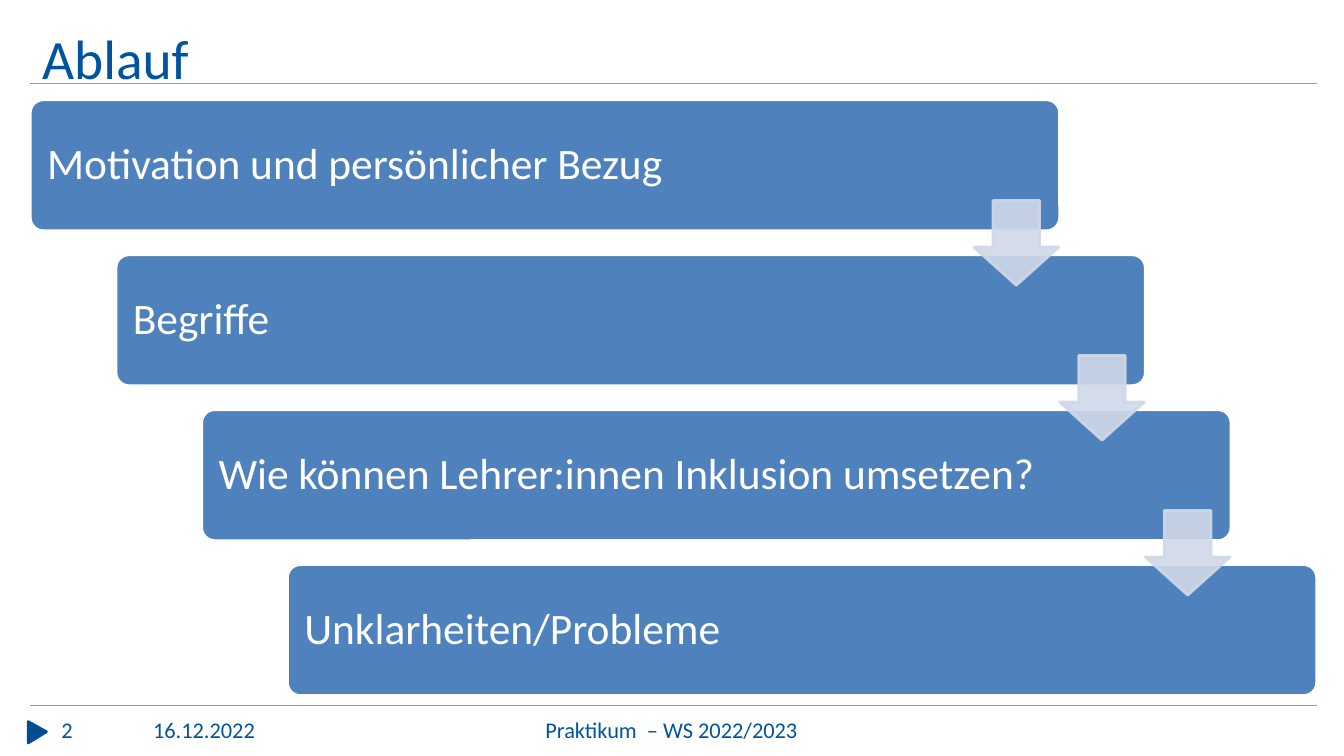
from lxml import etree
from pptx import Presentation
from pptx.dml.color import RGBColor
from pptx.enum import shapes, text
from pptx.oxml.ns import qn
from pptx.util import Inches, Pt

# Content
TITLE = "Ablauf"
STEPS = [
    "Motivation und persönlicher Bezug",
    "Begriffe",
    "Wie können Lehrer:innen Inklusion umsetzen?",
    "Unklarheiten/Probleme",
]
# text, left, width, alignment
FOOTER = [
    ("2", 0.51, 0.7, text.PP_ALIGN.LEFT),
    ("Praktikum  – WS 2022/2023", 3.25, 6.82, text.PP_ALIGN.CENTER),
    ("16.12.2022", 1.42, 1.57, text.PP_ALIGN.LEFT),
]
COLORS = {"dark": "004D91", "text": "00549F", "rule": "74A4D4",
          "step": "4F81BD", "white": "FFFFFF", "arrow": "D0D8E8"}
FONT = "Calibri"

# Layout in inches
LEFT, RIGHT = 0.3, 13.06
RULES = (0.83, 7)
STEP_W, STEP_H, STEP_TOP = 10.21, 1.3, 0.99
DX = (RIGHT - LEFT - STEP_W) / (len(STEPS) - 1)
DY = 1.537
ARROW, ARROW_LEFT, ARROW_TOP = 0.84, 9.66, 1.99


def rgb(name):
    return RGBColor.from_string(COLORS[name])


def paint(sp, fill, line, alpha=None):
    sp.shadow.inherit = False
    sp.fill.solid()
    sp.fill.fore_color.rgb = rgb(fill)
    sp.line.color.rgb = rgb(line)
    sp.line.width = Pt(2)
    if alpha:
        for clr in sp._element.spPr.iter(qn("a:srgbClr")):
            etree.SubElement(clr, qn("a:alpha")).set("val", str(alpha * 1000))


def write(sp, words, size, color, align=text.PP_ALIGN.LEFT,
          anchor=text.MSO_ANCHOR.TOP):
    tf = sp.text_frame
    tf.word_wrap = True
    tf.vertical_anchor = anchor
    tf.text = words
    p = tf.paragraphs[0]
    p.alignment = align
    f = p.runs[0].font
    f.name, f.size, f.color.rgb = FONT, Pt(size), rgb(color)
    return tf


def textbox(s, x, y, w, h, *args, **kwargs):
    sp = s.shapes.add_textbox(Inches(x), Inches(y), Inches(w), Inches(h))
    write(sp, *args, **kwargs)


def main():
    prs = Presentation()
    prs.slide_width, prs.slide_height = Inches(13.33), Inches(7.5)
    s = prs.slides.add_slide(prs.slide_layouts[6])

    # Footer marker
    fb = s.shapes.build_freeform(Inches(0.46), Inches(7.26))
    fb.add_line_segments([(Inches(0.28), Inches(7.37)),
                          (Inches(0.28), Inches(7.16))], close=True)
    paint(fb.convert_to_shape(), "dark", "dark")

    # Rules above and below the content
    for y in RULES:
        cx = s.shapes.add_connector(shapes.MSO_CONNECTOR.STRAIGHT,
                                    Inches(RIGHT), Inches(y), Inches(LEFT), Inches(y))
        cx.line.color.rgb = rgb("rule")
        cx.line.width = Pt(0.75)
        etree.SubElement(cx._element.spPr, qn("a:effectLst"))

    # Title
    textbox(s, 0.32, 0.29, 12.74, 0.55, TITLE, 39.6, "text",
            anchor=text.MSO_ANCHOR.MIDDLE)

    # Staircase of steps
    for i, step in enumerate(STEPS):
        sp = s.shapes.add_shape(shapes.MSO_SHAPE.ROUNDED_RECTANGLE,
                                Inches(LEFT + i * DX), Inches(STEP_TOP + i * DY),
                                Inches(STEP_W), Inches(STEP_H))
        sp.adjustments[0] = 0.1
        paint(sp, "step", "white")
        tf = write(sp, step, 31, "white", anchor=text.MSO_ANCHOR.MIDDLE)
        tf.margin_left = Inches(0.13)
        tf.paragraphs[0].line_spacing = 0.9

    # Arrows from step to step
    for i in range(len(STEPS) - 1):
        sp = s.shapes.add_shape(shapes.MSO_SHAPE.DOWN_ARROW,
                                Inches(ARROW_LEFT + i * DX), Inches(ARROW_TOP + i * DY),
                                Inches(ARROW), Inches(ARROW))
        sp.adjustments[0], sp.adjustments[1] = 0.55, 0.45
        paint(sp, "arrow", "arrow", alpha=90)

    # Footer
    for words, x, w, align in FOOTER:
        textbox(s, x, 7.06, w, 0.4, words, 16, "text", align)

    prs.save("out.pptx")


if __name__ == "__main__":
    main()
